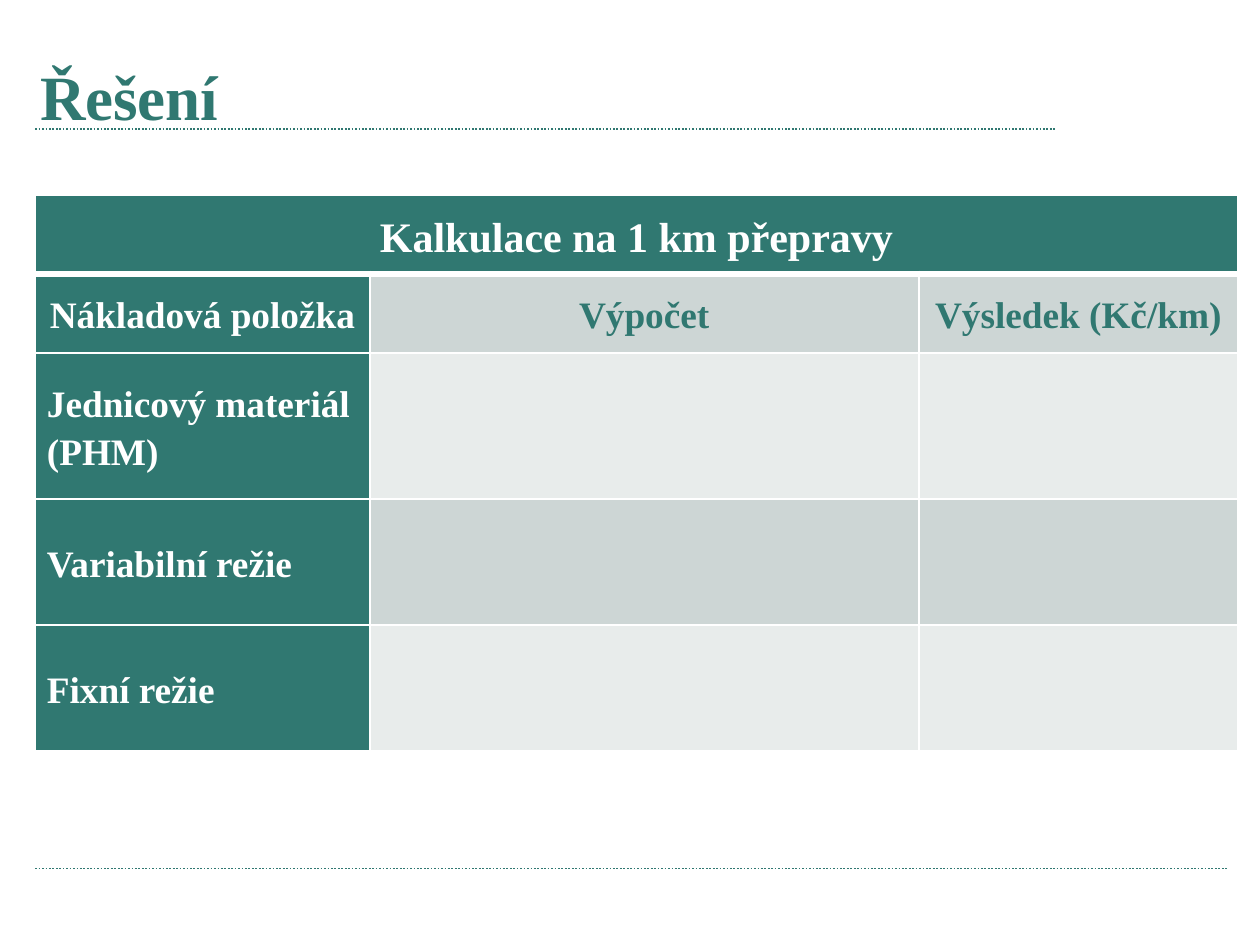
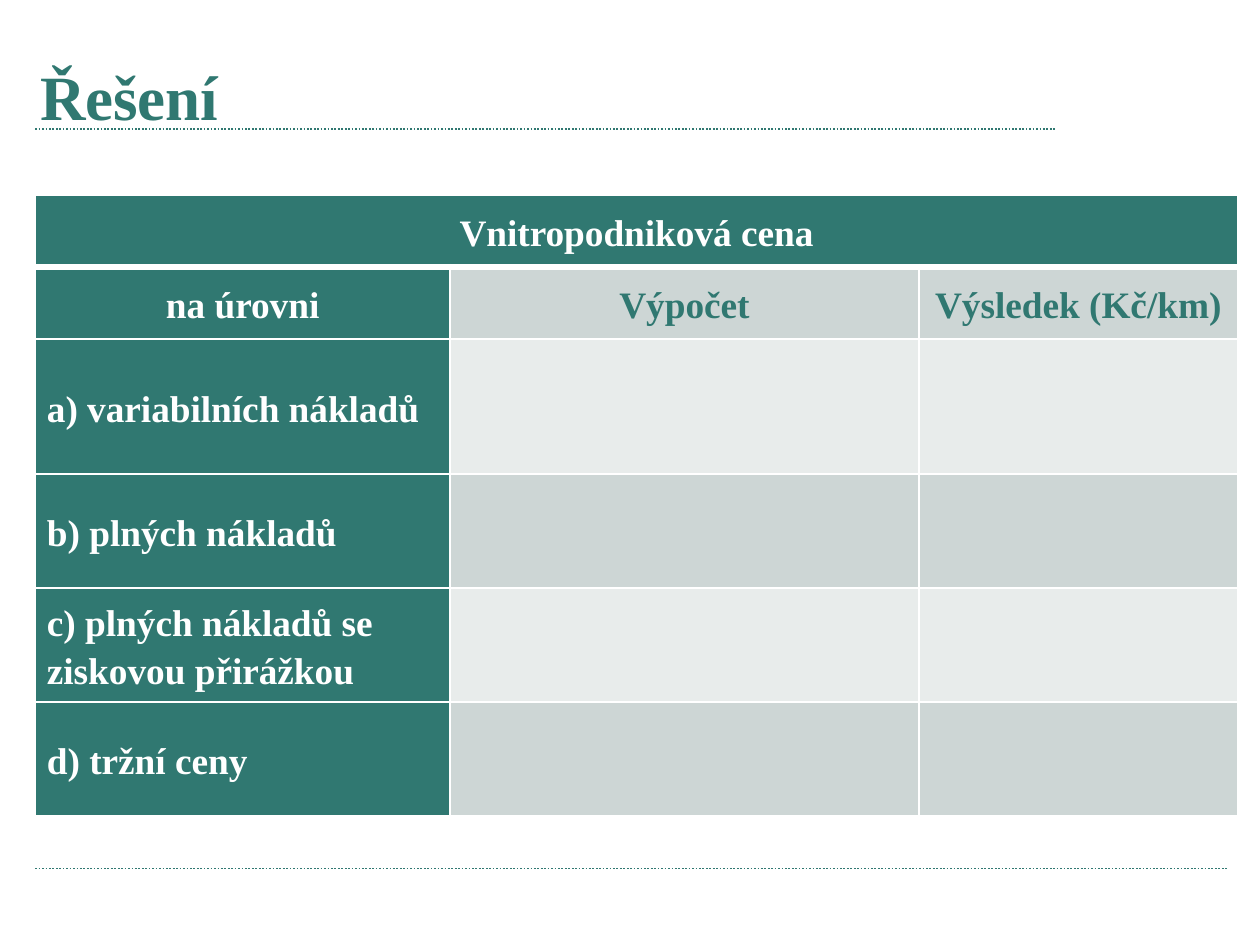
import pptx
import pptx.dml.color
import pptx.enum.dml
import pptx.enum.shapes
import pptx.enum.text
import pptx.oxml
import pptx.oxml.ns
import pptx.util

TEAL = pptx.dml.color.RGBColor(0x30, 0x78, 0x71)
WHITE = pptx.dml.color.RGBColor(0xFF, 0xFF, 0xFF)
BANDS = (pptx.dml.color.RGBColor(0xCD, 0xD6, 0xD5),
         pptx.dml.color.RGBColor(0xE8, 0xEC, 0xEB))
FONT = "Times New Roman"
CELL = pptx.util.Inches(0.01)
COLUMNS = 750
LEFT, TABLE_TOP, TABLE_WIDTH, RESULT_WIDTH = 21, 116, 716, 190
CENTER = pptx.enum.text.PP_ALIGN.CENTER
MIDDLE = pptx.enum.text.MSO_ANCHOR.MIDDLE


class Deck:
    """Build 4:3 slides in one teal style on a grid 750 columns wide."""

    def __init__(self):
        self.prs = pptx.Presentation()
        self.prs.slide_width = COLUMNS * CELL
        self.prs.slide_height = COLUMNS * CELL * 3 // 4
        self.slide = None

    def new_slide(self, heading):
        self.slide = self.prs.slides.add_slide(self.prs.slide_layouts[6])
        self.rule(77, 629)
        self.rule(517, 731)
        self.title(heading)

    def rule(self, row, end):
        rule = self.slide.shapes.add_connector(
            pptx.enum.shapes.MSO_CONNECTOR.STRAIGHT,
            LEFT * CELL, row * CELL, end * CELL, row * CELL)
        rule.line.color.rgb = TEAL
        rule.line.width = pptx.util.Pt(0.75)
        rule.line.dash_style = pptx.enum.dml.MSO_LINE.ROUND_DOT
        properties = rule._element.spPr
        properties.append(pptx.oxml.parse_xml(
            f'<a:effectLst {pptx.oxml.ns.nsdecls("a")}/>'))

    def style(self, paragraph, size, color):
        for run in paragraph.runs:
            run.font.name = FONT
            run.font.size = pptx.util.Pt(size)
            run.font.bold = True
            run.font.color.rgb = color

    def title(self, heading):
        box = self.slide.shapes.add_textbox(14 * CELL, 29 * CELL, 661 * CELL, 59 * CELL)
        frame = box.text_frame
        frame.word_wrap = True
        frame.vertical_anchor = pptx.enum.text.MSO_ANCHOR.BOTTOM
        frame.margin_bottom = 9 * CELL
        frame.text = heading
        self.style(frame.paragraphs[0], 27, TEAL)

    def borders(self, cell, top, bottom):
        properties = cell._tc.get_or_add_tcPr()
        sides = (("L", 1), ("R", 1), ("T", top), ("B", bottom))
        for index, (side, width) in enumerate(sides):
            properties.insert(index, pptx.oxml.parse_xml(
                f'<a:ln{side} {pptx.oxml.ns.nsdecls("a")} w="{pptx.util.Pt(width)}">'
                f'<a:solidFill><a:srgbClr val="{WHITE}"/></a:solidFill></a:ln{side}>'))

    def fill_cell(self, cell, text, row, column, size):
        is_label = row == 0 or column == 0
        cell.margin_left = cell.margin_right = 7 * CELL
        cell.margin_top = cell.margin_bottom = 0
        cell.vertical_anchor = MIDDLE
        cell.fill.solid()
        cell.fill.fore_color.rgb = TEAL if is_label else BANDS[(row - 1) % 2]
        self.borders(cell, 3 if row == 1 else 1, 3 if row == 0 else 1)
        if text:
            cell.text_frame.text = text
            paragraph = cell.text_frame.paragraphs[0]
            paragraph.line_spacing = 1.15
            if row < 2:
                paragraph.alignment = CENTER
            self.style(paragraph, size, WHITE if is_label else TEAL)

    def cost_table(self, banner, banner_size, labels, label_width, heights):
        content = [(banner, "", ""), (labels[0], "Výpočet", "Výsledek (Kč/km)")]
        content += [(label, "", "") for label in labels[1:]]
        table = self.slide.shapes.add_table(
            len(content), 3, LEFT * CELL, TABLE_TOP * CELL,
            TABLE_WIDTH * CELL, sum(heights) * CELL).table
        widths = (label_width, TABLE_WIDTH - label_width - RESULT_WIDTH, RESULT_WIDTH)
        for column, width in zip(table.columns, widths):
            column.width = width * CELL
        for row, (texts, height) in enumerate(zip(content, heights)):
            table.rows[row].height = height * CELL
            for column, text in enumerate(texts):
                self.fill_cell(table.cell(row, column), text, row, column,
                               16 if row else banner_size)
        table.cell(0, 0).merge(table.cell(0, 2))


def main():
    deck = Deck()
    deck.new_slide("Řešení")
    deck.cost_table(
        "Kalkulace na 1 km přepravy", 18,
        ("Nákladová položka", "Jednicový materiál (PHM)", "Variabilní režie", "Fixní režie"),
        199, (47, 47, 87, 75, 75))
    deck.new_slide("Řešení")
    deck.cost_table(
        "Vnitropodniková cena", 16,
        ("na úrovni", "a) variabilních nákladů", "b) plných nákladů",
         "c) plných nákladů se ziskovou přirážkou", "d) tržní ceny"),
        247, (43, 43, 80, 68, 68, 68))
    deck.prs.save("out.pptx")


if __name__ == "__main__":
    main()
